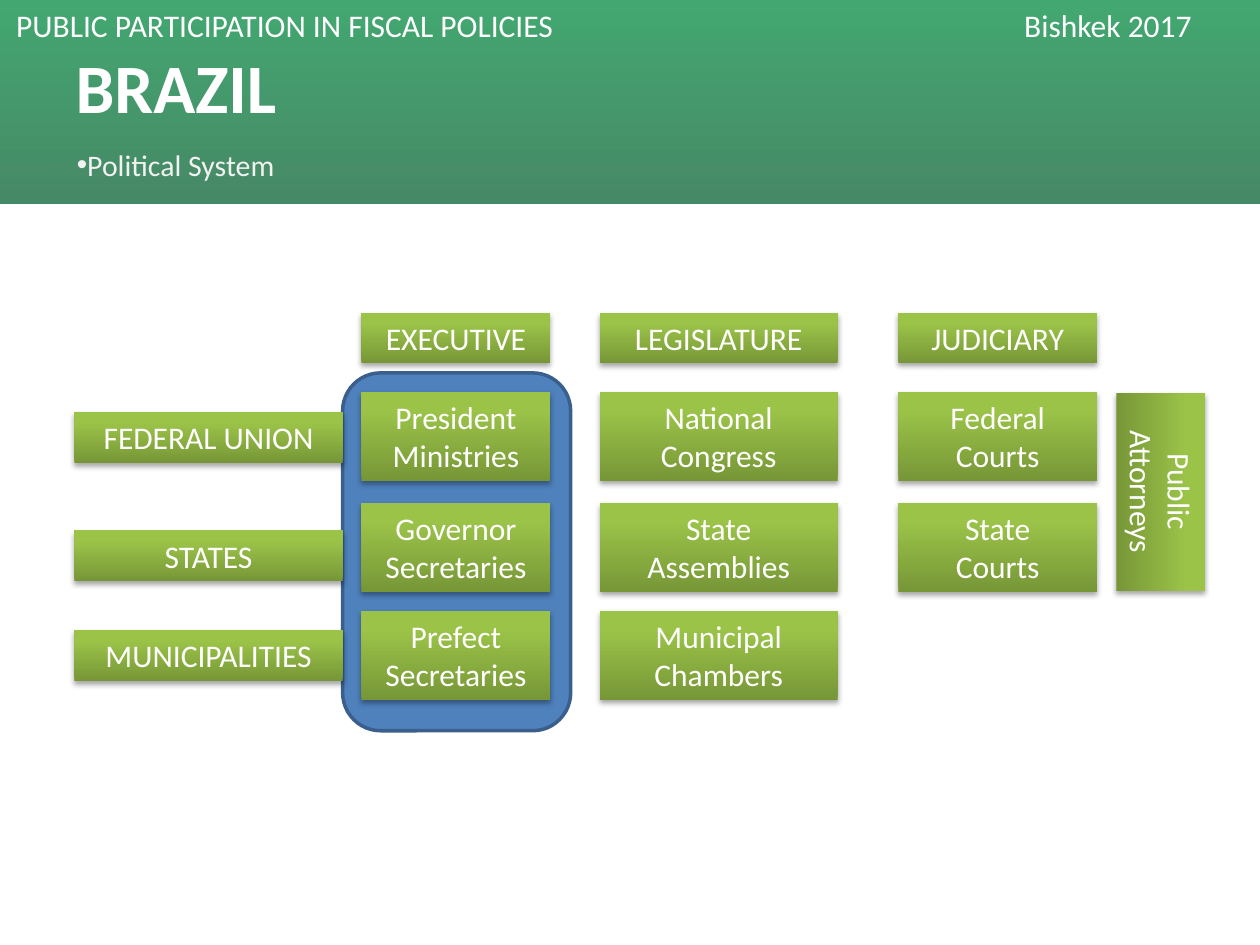
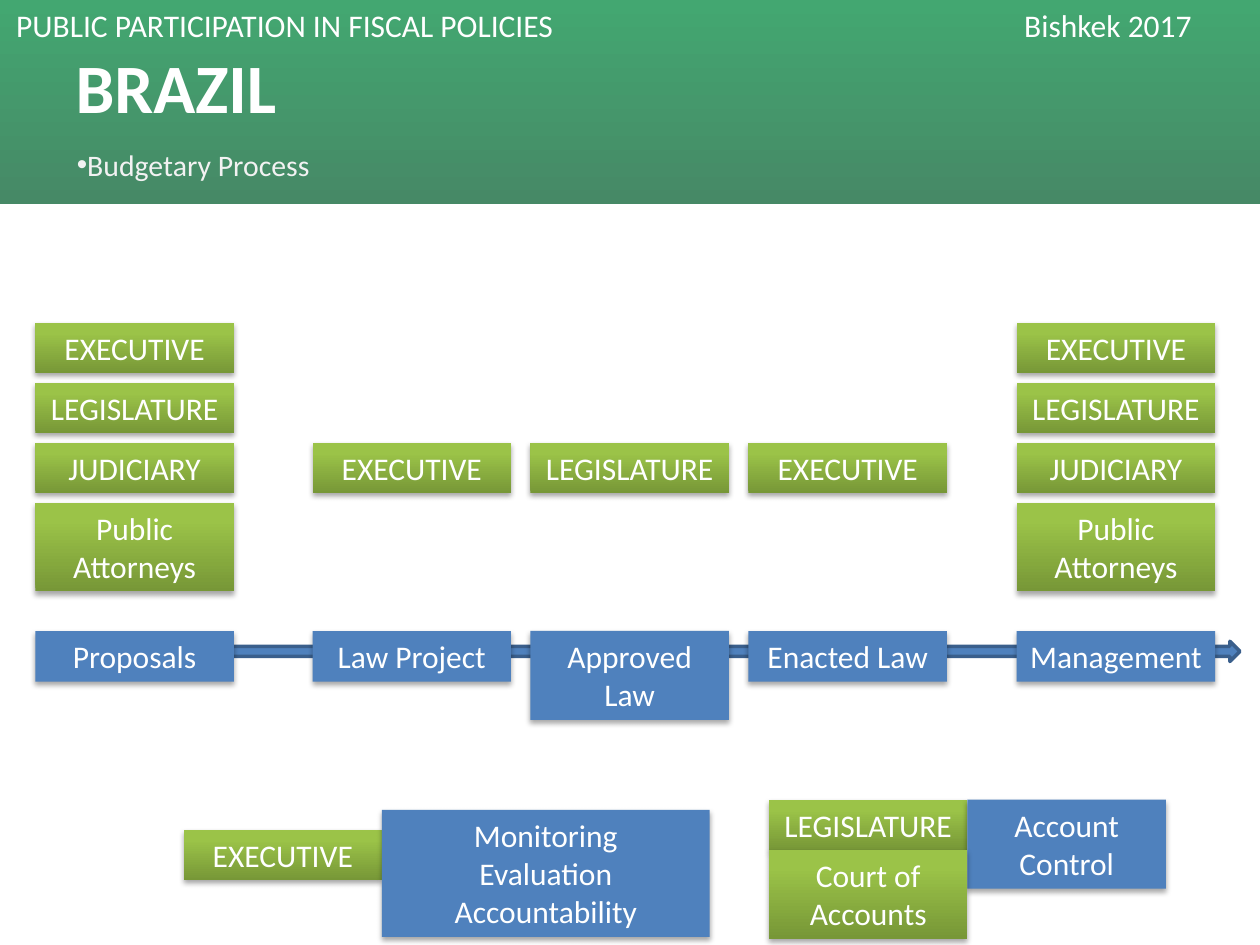
from typing import NamedTuple

from lxml import etree
from pptx import Presentation
from pptx import util as u
from pptx.dml.color import RGBColor
from pptx.enum import shapes, text
from pptx.oxml.ns import qn

BAND_TOP = RGBColor(0x43, 0xA7, 0x71)
BAND_BOTTOM = RGBColor(0x46, 0x89, 0x66)
GREEN_DARK = RGBColor(0x77, 0x97, 0x37)
GREEN_LIGHT = RGBColor(0x9B, 0xC3, 0x48)
BLUE = RGBColor(0x4F, 0x81, 0xBD)
BLUE_DARK = RGBColor(0x3A, 0x5F, 0x8C)
WHITE = RGBColor(0xFF, 0xFF, 0xFF)
OFF_WHITE = RGBColor(0xF2, 0xF2, 0xF2)

FONT = "Calibri"
BOX_WIDTH = 113.4
LINE_HEIGHT = 21.8
BOX_PADDING = 7.2
STACK_STEP = 34.3


class Area(NamedTuple):
    left: float
    top: float
    width: float
    height: float

    def lengths(self) -> list:
        return [u.Pt(value) for value in self]


class Box(NamedTuple):
    label: str
    left: float
    top: float
    width: float = BOX_WIDTH
    lines: int = 1
    blue: bool = False
    rotation: float = 0


class Column(NamedTuple):
    heading: str
    left: float
    width: float
    bodies: tuple


class Stage(NamedTuple):
    label: str
    left: float
    lines: int = 1


BAND = Area(0, 0, 720, 116.6)
RUNNING_HEAD = Area(2.2, 0, 704, 29)
TITLE = Area(36, 21.6, 648, 55.4)
SUBTITLE = Area(36.7, 77, 646.6, 33.8)

COLUMNS = (
    Column("EXECUTIVE", 206.6, 108,
           ("President\nMinistries", "Governor\nSecretaries", "Prefect\nSecretaries")),
    Column("LEGISLATURE", 342.7, 136,
           ("National Congress", "State Assemblies", "Municipal Chambers")),
    Column("JUDICIARY", 513.4, BOX_WIDTH, ("Federal Courts", "State\nCourts")),
)
ROW_TOPS = (223.9, 287.3, 349.2)
LEVELS = (("FEDERAL UNION", 235.4), ("STATES", 303.1), ("MUNICIPALITIES", 360))

STAGES = (
    Stage("Proposals", 20.2),
    Stage("Law Project", 178.6),
    Stage("Approved Law", 303.1, 2),
    Stage("Enacted Law", 427.7),
    Stage("Management", 581),
)
POWERS = ("EXECUTIVE", "LEGISLATURE", "JUDICIARY", "Public Attorneys")
STACK_TOP = 184.3


def format_text(frame, size: float, color: RGBColor, alignment, bold: bool = False) -> None:
    frame.word_wrap = True
    frame.auto_size = text.MSO_AUTO_SIZE.NONE
    for paragraph in frame.paragraphs:
        paragraph.alignment = alignment
        for run in paragraph.runs:
            run.font.name = FONT
            run.font.size = u.Pt(size)
            run.font.bold = bold
            run.font.color.rgb = color


def fill_gradient(shape, colors: tuple, angle: float, end: float = 1) -> None:
    shape.fill.gradient()
    shape.fill.gradient_angle = angle
    for stop, color in zip(shape.fill.gradient_stops, colors):
        stop.color.rgb = color
    shape.fill.gradient_stops[1].position = end


def add_shadow(shape) -> None:
    effects = shape.element.spPr.find(qn("a:effectLst"))
    shadow = etree.SubElement(effects, qn("a:outerShdw"), blurRad="40000",
                              dist="23000", dir="5400000", rotWithShape="0")
    color = etree.SubElement(shadow, qn("a:srgbClr"), val="000000")
    etree.SubElement(color, qn("a:alpha"), val="35000")


def add_plain_shape(slide, kind, area: Area):
    shape = slide.shapes.add_shape(kind, *area.lengths())
    shape.shadow.inherit = False
    shape.line.fill.background()
    return shape


def add_outlined_shape(slide, kind, area: Area) -> None:
    shape = add_plain_shape(slide, kind, area)
    shape.fill.solid()
    shape.fill.fore_color.rgb = BLUE
    shape.line.color.rgb = BLUE_DARK
    shape.line.width = u.Pt(2)


def add_box(slide, box: Box) -> None:
    height = BOX_PADDING + LINE_HEIGHT * box.lines
    area = Area(box.left, box.top, box.width, height)
    shape = add_plain_shape(slide, shapes.MSO_SHAPE.RECTANGLE, area)
    shape.rotation = box.rotation
    if box.blue:
        shape.fill.solid()
        shape.fill.fore_color.rgb = BLUE
    else:
        fill_gradient(shape, (GREEN_DARK, GREEN_LIGHT), 90, 0.8)
    add_shadow(shape)
    shape.text_frame.text = box.label
    shape.text_frame.vertical_anchor = text.MSO_ANCHOR.TOP
    format_text(shape.text_frame, 18, WHITE, text.PP_ALIGN.CENTER)


def place(shape, area: Area) -> None:
    shape.left, shape.top, shape.width, shape.height = area.lengths()


def prepare_layout(layout, slide) -> None:
    band = add_plain_shape(slide, shapes.MSO_SHAPE.RECTANGLE, BAND)
    fill_gradient(band, (BAND_TOP, BAND_BOTTOM), 270)
    running_head = slide.shapes.add_textbox(*RUNNING_HEAD.lengths())
    frame = running_head.text_frame
    frame.text = "PUBLIC PARTICIPATION IN FISCAL POLICIES\tBishkek 2017"
    format_text(frame, 18, WHITE, text.PP_ALIGN.LEFT)
    properties = frame.paragraphs[0]._p.get_or_add_pPr()
    tabs = etree.SubElement(properties, qn("a:tabLst"))
    etree.SubElement(tabs, qn("a:tab"), pos=str(u.Pt(576)), algn="l")

    title, subtitle = layout.placeholders[0], layout.placeholders[1]
    place(title, TITLE)
    place(subtitle, SUBTITLE)
    for number, shape in enumerate((band, running_head), start=20):
        shape.element.nvSpPr.cNvPr.set("id", str(number))
        title.element.addprevious(shape.element)


def set_headings(slide, topic: str) -> None:
    title, subtitle = slide.shapes.title, slide.placeholders[1]
    title.text_frame.text = "BRAZIL"
    subtitle.text_frame.text = topic
    for placeholder in (title, subtitle):
        placeholder.text_frame.vertical_anchor = text.MSO_ANCHOR.MIDDLE
    format_text(title.text_frame, 39.6, WHITE, text.PP_ALIGN.LEFT, True)
    format_text(subtitle.text_frame, 17, OFF_WHITE, text.PP_ALIGN.LEFT)
    properties = subtitle.text_frame.paragraphs[0]._p.get_or_add_pPr()
    etree.SubElement(properties, qn("a:buChar"), char="•")


def draw_political_system(slide) -> None:
    add_outlined_shape(slide, shapes.MSO_SHAPE.ROUNDED_RECTANGLE,
                       Area(195.8, 213.1, 130.3, 204.5))
    for label, top in LEVELS:
        add_box(slide, Box(label, 42.5, top, 153.4))
    for column in COLUMNS:
        add_box(slide, Box(column.heading, column.left, 178.6, column.width))
        for body, top in zip(column.bodies, ROW_TOPS):
            add_box(slide, Box(body, column.left, top, column.width, 2))
    add_box(slide, Box("Public Attorneys", 606.6, 255.6, lines=2, rotation=90))


def draw_budgetary_process(slide) -> None:
    add_outlined_shape(slide, shapes.MSO_SHAPE.RIGHT_ARROW,
                       Area(31, 366.5, 677.5, 11.5))
    for stage in STAGES:
        add_box(slide, Box(stage.label, stage.left, 360.6, lines=stage.lines, blue=True))
    for stage in (STAGES[0], STAGES[-1]):
        for level, power in enumerate(POWERS):
            lines = 2 if power == POWERS[-1] else 1
            add_box(slide, Box(power, stage.left, STACK_TOP + STACK_STEP * level, lines=lines))
    for stage, power in zip(STAGES[1:-1], ("EXECUTIVE", "LEGISLATURE", "EXECUTIVE")):
        add_box(slide, Box(power, stage.left, STACK_TOP + STACK_STEP * 2))
    for box in (
        Box("EXECUTIVE", 104.9, 474),
        Box("Monitoring\nEvaluation\nAccountability", 218.3, 462.8, 187.2, 3, True),
        Box("LEGISLATURE", 439.4, 457),
        Box("Account Control", 552.8, 457, lines=2, blue=True),
        Box("Court of Accounts", 439.4, 485.6, lines=2),
    ):
        add_box(slide, box)


def main() -> None:
    presentation = Presentation()
    presentation.slide_width, presentation.slide_height = u.Pt(720), u.Pt(540)
    layout = presentation.slide_layouts[0]
    system_slide = presentation.slides.add_slide(layout)
    process_slide = presentation.slides.add_slide(layout)
    prepare_layout(layout, system_slide)
    set_headings(system_slide, "Political System")
    draw_political_system(system_slide)
    set_headings(process_slide, "Budgetary Process")
    draw_budgetary_process(process_slide)
    presentation.save("out.pptx")


if __name__ == "__main__":
    main()
